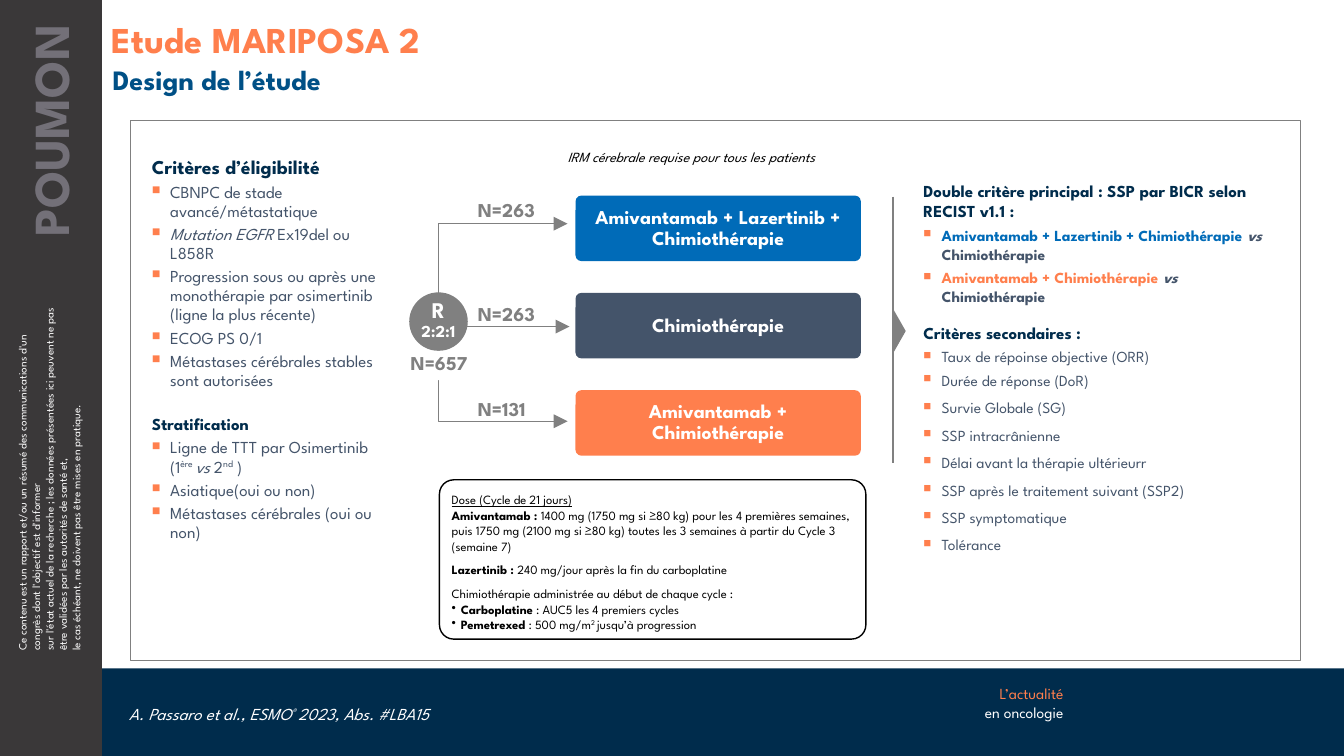
import pptx
import pptx.util
import pptx.dml.color
import pptx.enum.shapes
import pptx.enum.text
import pptx.oxml
import pptx.oxml.ns

Pt = pptx.util.Pt
SHAPE = pptx.enum.shapes.MSO_SHAPE
ALIGN = pptx.enum.text.PP_ALIGN
ANCHOR = pptx.enum.text.MSO_ANCHOR
FONT = "League Spartan"
NAVY, BLUE, ORANGE, SLATE = "002C4C", "006BB8", "FF7F4D", "44546A"
GRAY, WHITE, BLACK = "808080", "FFFFFF", "000000"

# Content. Run: (text, size, colour, flags), flags: b bold, i italic, u underline, ^ superscript
DISCLAIMER = (
    "Ce contenu est un rapport et/ou un résumé des communications d'un congrès dont l'objectif est d'informer \v"
    "sur l'état actuel de la recherche ; les données présentées ici peuvent ne pas être validées par les "
    "autorités de santé et, \vle cas échéant, ne doivent pas être mises en pratique.")
CITATION = [("A. Passaro\u00a0et al., ESMO", 12, WHITE, "i"), ("® ", 12, WHITE, "i^"),
            ("2023, Abs. #LBA15", 12, WHITE, "i")]
ARMS = [("Amivantamab + Lazertinib + Chimiothérapie", BLUE, "N=263", 141.1),
        ("Chimiothérapie", SLATE, "N=263", 215.3),
        ("Amivantamab + Chimiothérapie", ORANGE, "N=131", 283.7)]


def plain(text, size):
    return [(text, size, SLATE, "")]


# Paragraph: (runs, format)
ITEM = dict(line=13.6, before=3, bullet="■", hang=13)
SPACED = dict(ITEM, after=3)
ELIGIBILITY = [
    ([("Critères d’éligibilité", 14, NAVY, "b")], dict(line=13.6)),
    (plain("CBNPC de stade avancé/métastatique", 12), ITEM),
    ([("Mutation EGFR", 12, SLATE, "i"), (" Ex19del ou L858R", 12, SLATE, "")], ITEM),
    (plain("Progression sous ou après une monothérapie par osimertinib (ligne la plus récente)", 12), ITEM),
    (plain("ECOG PS 0/1", 12), ITEM),
    (plain("Métastases cérébrales stables sont autorisées", 12), ITEM),
    ([("Stratification", 12, NAVY, "b")], dict(line=13.6, before=18)),
    ([("Ligne de TTT par Osimertinib (1", 12, SLATE, ""), ("ère ", 12, SLATE, "^"), ("vs", 12, SLATE, "i"),
      (" 2", 12, SLATE, ""), ("nd", 12, SLATE, "^"), (" )", 12, SLATE, "")], ITEM),
    (plain("Asiatique(oui ou non)", 12), ITEM),
    (plain("Métastases cérébrales (oui ou non)", 12), ITEM),
]
VERSUS = [("vs ", 11, SLATE, "bi"), ("Chimiothérapie", 11, SLATE, "b")]
SECONDARY = ["Durée de réponse (DoR)", "Survie Globale (SG)", "SSP intracrânienne",
             "Délai avant la thérapie ultérieurr", "SSP après le traitement suivant (SSP2)",
             "SSP symptomatique", "Tolérance"]
ENDPOINTS = [
    ([("Double critère principal : SSP par BICR selon RECIST v1.1 :", 12, NAVY, "b")], {}),
    ([("Amivantamab + Lazertinib + Chimiothérapie ", 11, BLUE, "b")] + VERSUS, ITEM),
    ([("Amivantamab + Chimiothérapie ", 11, ORANGE, "b")] + VERSUS, ITEM),
    ([("Critères secondaires :", 12, NAVY, "b")], dict(before=12)),
    (plain("Taux de répoinse objective (ORR)", 11), ITEM),
] + [(plain(text, 11), SPACED) for text in SECONDARY]
DOSE_ITEM = dict(line=11, bullet="•", hang=6.5, bullet_color=BLACK, bullet_size=100)
DOSE = [
    ([("Dose (Cycle de 21 jours)", 9, BLACK, "u")], dict(line=11)),
    ([("Amivantamab : ", 9, BLACK, "b"),
      ("1400 mg (1750 mg si ≥80 kg) pour les 4 premières semaines, puis 1750 mg (2100 mg si ≥80 kg) "
       "toutes les 3 semaines à partir du Cycle 3 (semaine 7)", 9, BLACK, "")], dict(line=11, after=6)),
    ([("Lazertinib : ", 9, BLACK, "b"), ("240 mg/jour après la fin du carboplatine", 9, BLACK, "")],
     dict(line=11, after=6)),
    ([("Chimiothérapie administrée au début de chaque cycle :", 9, BLACK, "")], dict(line=11)),
    ([("Carboplatine ", 9, BLACK, "b"), (": AUC5 les 4 premiers cycles", 9, BLACK, "")], DOSE_ITEM),
    ([("Pemetrexed ", 9, BLACK, "b"), (": 500 mg/m", 9, BLACK, ""), ("2 ", 9, BLACK, "^"),
      ("jusqu’à progression", 9, BLACK, "")], DOSE_ITEM),
]

presentation = pptx.Presentation()
presentation.slide_width, presentation.slide_height = Pt(960), Pt(540)
slide = presentation.slides.add_slide(presentation.slide_layouts[6])


# Helpers
def color(hex_text):
    return pptx.dml.color.RGBColor.from_string(hex_text)


def add_element(parent, tag, **attributes):
    element = pptx.oxml.parse_xml(f"<a:{tag} {pptx.oxml.ns.nsdecls('a')}/>")
    for name, value in attributes.items():
        element.set(name, str(value))
    parent.append(element)


def add_bullet(paragraph, layout):
    properties = paragraph._p.get_or_add_pPr()
    indent = Pt(layout["hang"])
    properties.set("marL", str(indent))
    properties.set("indent", str(-indent))
    add_element(properties, "buClr")
    add_element(properties[-1], "srgbClr", val=layout.get("bullet_color", ORANGE))
    add_element(properties, "buSzPct", val=layout.get("bullet_size", 70) * 1000)
    add_element(properties, "buChar", char=layout["bullet"])


def write(shape, paragraphs, align=ALIGN.LEFT, anchor=ANCHOR.TOP, insets=(7.2, 3.6, 7.2, 3.6), wrap=True):
    frame = shape.text_frame
    frame.word_wrap = wrap
    if not wrap:
        frame.auto_size = pptx.enum.text.MSO_AUTO_SIZE.SHAPE_TO_FIT_TEXT
    frame.vertical_anchor = anchor
    frame.margin_left, frame.margin_top, frame.margin_right, frame.margin_bottom = map(Pt, insets)
    for index, (runs, layout) in enumerate(paragraphs):
        paragraph = frame.add_paragraph() if index else frame.paragraphs[0]
        if "bullet" in layout:
            add_bullet(paragraph, layout)
        paragraph.alignment = align
        if "line" in layout:
            paragraph.line_spacing = Pt(layout["line"])
        if "scale" in layout:
            paragraph.line_spacing = layout["scale"]
        paragraph.space_before = Pt(layout.get("before", 0))
        paragraph.space_after = Pt(layout.get("after", 0))
        for text, size, ink, flags in runs:
            for part_index, part in enumerate(text.split("\v")):
                if part_index:
                    paragraph.add_line_break()
                if not part:
                    continue
                run = paragraph.add_run()
                run.text = part
                run.font.name, run.font.size = FONT, Pt(size)
                run.font.color.rgb = color(ink)
                run.font.bold, run.font.italic, run.font.underline = (flag in flags for flag in "biu")
                if "^" in flags:
                    run._r.get_or_add_rPr().set("baseline", "30000")


def add_text(box, paragraphs, rotation=0, **options):
    shape = slide.shapes.add_textbox(*map(Pt, box))
    shape.rotation = rotation
    write(shape, paragraphs, **options)


def add_shape(kind, box, fill=None, line=None, width=1, corner=None):
    shape = slide.shapes.add_shape(kind, *map(Pt, box))
    shape.shadow.inherit = False
    if fill:
        shape.fill.solid()
        shape.fill.fore_color.rgb = color(fill)
    else:
        shape.fill.background()
    if line:
        shape.line.color.rgb = color(line)
        shape.line.width = Pt(width)
    else:
        shape.line.fill.background()
    if corner is not None:
        shape.adjustments[0] = corner
    return shape


def add_line(*ends):
    connector = slide.shapes.add_connector(pptx.enum.shapes.MSO_CONNECTOR.STRAIGHT, *map(Pt, ends))
    connector.line.color.rgb = color(GRAY)
    connector.line.width = Pt(1)
    add_element(connector._element.spPr, "effectLst")
    return connector


def add_arrowheads(shape, *ends):
    for end in ends:
        add_element(shape.line._get_or_add_ln(), end, type="triangle", w="lg", len="lg")


# Bands, side texts and titles
add_shape(SHAPE.RECTANGLE, (72.8, 477.4, 887.2, 62.6), NAVY)
add_shape(SHAPE.RECTANGLE, (0, 0, 72.8, 540), "3A3839")
add_text((-94.3, 314.6, 259.2, 55.4), [([(DISCLAIMER, 8, WHITE, "")], {})], rotation=270)
add_text((-74.9, 85, 221, 51.1), [([("POUMON", 36, "737078", "b")], {})], rotation=270,
         align=ALIGN.RIGHT, insets=(7.2, 3.6, 17.3, 3.6))
add_text((648.7, 485.3, 118.1, 33.8),
         [([("L’actualité\v", 11, ORANGE, ""), ("en oncologie", 11, WHITE, "")], {})], align=ALIGN.RIGHT)
add_text((72.8, 12.2, 877, 28.8), [([("Etude MARIPOSA 2", 26, ORANGE, "b")], dict(scale=0.9))])
add_text((73.4, 41, 886, 36), [([("Design de l’étude", 20, "005086", "b")], {})])
add_text((85, 479.5, 541.4, 60.5), [(CITATION, {})], anchor=ANCHOR.MIDDLE)
add_shape(SHAPE.RECTANGLE, (92.9, 86.4, 835.9, 385.2), line=GRAY, width=0.75)

# Randomisation arrows and arms
add_arrowheads(add_line(318.2, 233.3, 406.8, 233.3), "tailEnd")
bracket = add_shape(SHAPE.LEFT_BRACKET, (313.2, 159.8, 92.2, 141.1), line=GRAY, corner=0)
add_arrowheads(bracket, "headEnd", "tailEnd")
label_insets = (0, 0, 0, 3.6)
for index, (name, fill, count, count_top) in enumerate(ARMS):
    arm = add_shape(SHAPE.ROUNDED_RECTANGLE, (411.1, 139.7 + 69.5 * index, 203.8, 46.8), fill, corner=0.09)
    write(arm, [([(name, 14, WHITE, "b")], dict(line=15))], align=ALIGN.CENTER, anchor=ANCHOR.MIDDLE,
          insets=[5.8] * 4)
    add_text((341.3, count_top, 42.5, 20.9), [([(count, 14, GRAY, "b")], {})], insets=label_insets, wrap=False)
circle = add_shape(SHAPE.OVAL, (292.3, 208.8, 41.8, 41.8), GRAY)
write(circle, [([("R\v", 16, WHITE, "b"), ("2:2:1", 12, WHITE, "b")], dict(line=13))],
      align=ALIGN.CENTER, anchor=ANCHOR.BOTTOM, insets=[0.7] * 4)
total = add_shape(SHAPE.RECTANGLE, (284.4, 250.6, 58.3, 20.9), WHITE)
write(total, [([("N=657", 14, GRAY, "b")], {})], align=ALIGN.CENTER, anchor=ANCHOR.MIDDLE, insets=label_insets)

# Separator and text columns
add_line(637.9, 140.4, 637.9, 330.5)
add_shape(SHAPE.ISOSCELES_TRIANGLE, (625.7, 231.8, 33.1, 9.4), GRAY).rotation = 90
add_text((405.4, 105.8, 266.4, 15.8),
         [([("IRM cérebrale requise pour tous les patients", 10, BLACK, "i")], {})], insets=label_insets)
add_text((101.5, 110.2, 187.2, 303.8), ELIGIBILITY)
add_text((653.8, 117.4, 268.6, 290.2), ENDPOINTS, anchor=ANCHOR.MIDDLE, insets=[5.8] * 4)
dose_box = add_shape(SHAPE.ROUNDED_RECTANGLE, (313.9, 342.7, 304.6, 113.8), WHITE, BLACK, corner=0.09)
write(dose_box, DOSE, insets=[5.8] * 4)

presentation.save("out.pptx")
